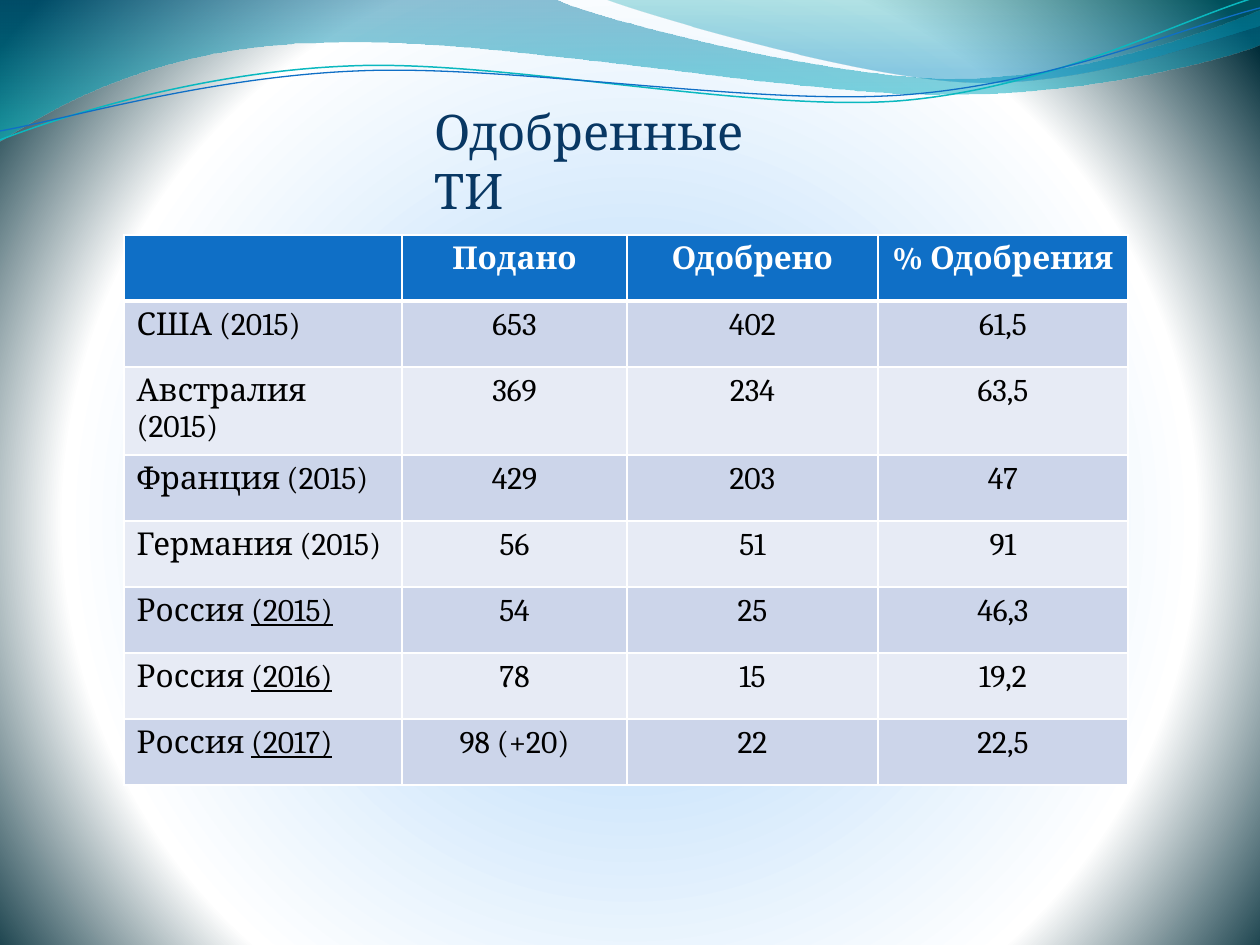
import math
from dataclasses import dataclass
from pptx import Presentation
from pptx import util as u
from pptx.dml.color import RGBColor
from pptx.enum import text
from pptx.oxml import ns
from lxml import etree

SCALE = u.Inches(10) / 1260  # EMU in one px


@dataclass(frozen=True)
class Theme:
    font: str = "Cambria"
    head: int = 28
    cell: int = 18
    title: str = "083763"
    ink: str = "000000"
    white: str = "FFFFFF"
    blue: str = "0F6FC6"
    teal: str = "0AB8BF"
    bands: tuple = ("CCD5EA", "E7EBF5")
    # gradient stops: position %, colour, opacity %
    back: tuple = ((25, "C8E3FB", 100), (72, "FFFFFF", 100), (100, "002C38", 100))
    wave: tuple = ((0, "0074A1", 45), (100, "00C6CF", 55))
    crest: tuple = ((0, "00A1A9", 30), (80, "008BBF", 45))


T = Theme()

# Outlines in px: a pair is a corner, three pairs are a Bezier curve
WAVE = [(0, 0), (554, -1),
        (600, 21, 837, 79, 955, 79), (1074, 79, 1207, 33, 1260, 11), (1261, 45),
        (1239, 55, 1096, 96, 940, 95), (784, 95, 481, 35, 324, 43),
        (163, 45, 58, 105, -1, 142)]
CREST = [(604, -1), (641, 14, 859, 78, 969, 82),
         (1079, 87, 1211, 40, 1260, 26), (1260, 0)]
AREAS = [((-1, -1, 1262, 144), WAVE, T.wave),
         ((604, -1, 656, 88), CREST, T.crest)]
LINES = [
    ((-3, 28, 1262, 89), T.teal, 0.85,
     [(0, 140), (60, 117, 199, 72, 349, 66),
      (498, 59, 747, 112, 898, 101), (1050, 89, 1182, 19, 1257, -3)]),
    ((-3, 38, 1264, 73), T.blue, 0.75,
     [(0, 131), (59, 121, 207, 77, 357, 71),
      (508, 64, 752, 106, 903, 95), (1053, 84, 1187, 26, 1260, 8)]),
]
TILT = -2.7  # degrees, of both lines

# Text after "_" is underlined
ROWS = [
    ("", "Подано", "Одобрено", "% Одобрения"),
    ("США (2015)", "653", "402", "61,5"),
    ("Австралия (2015)", "369", "234", "63,5"),
    ("Франция (2015)", "429", "203", "47"),
    ("Германия (2015)", "56", "51", "91"),
    ("Россия _(2015)", "54", "25", "46,3"),
    ("Россия _(2016)", "78", "15", "19,2"),
    ("Россия _(2017)", "98 (+20)", "22", "22,5"),
]
COLS = (278, 225, 251, 250)
ROW = 66


def px(n):
    return u.Emu(round(n * SCALE))


def rgb(code):
    return RGBColor.from_string(code)


def add(node, tag, **attrs):
    return etree.SubElement(node, ns.qn(tag), {k: str(v) for k, v in attrs.items()})


def shade(fill, stops, ring=None):
    """Gradient with opacity: downward, or circular about a rectangle."""
    fill.gradient()
    grad = fill._xPr.find(ns.qn("a:gradFill"))
    for kid in list(grad):
        grad.remove(kid)
    group = add(grad, "a:gsLst")
    for pos, code, alpha in stops:
        clr = add(add(group, "a:gs", pos=pos * 1000), "a:srgbClr", val=code)
        add(clr, "a:alpha", val=alpha * 1000)
    if ring:
        way = add(grad, "a:path", path="circle")
        add(way, "a:fillToRect", **{k: v * 1000 for k, v in zip("ltrb", ring)})
    else:
        add(grad, "a:lin", ang=5400000, scaled=0)


def curve(slide, box, parts, close, tilt=0):
    """Freeform whose sides may be Bezier curves, tilted about its box."""
    left, top, width, height = box
    mid_x, mid_y = left + width / 2, top + height / 2
    sin, cos = math.sin(math.radians(-tilt)), math.cos(math.radians(-tilt))

    def local(x, y):
        dx, dy = x - mid_x, y - mid_y
        return (px(dx * cos - dy * sin + width / 2),
                px(dx * sin + dy * cos + height / 2))

    ends = [local(*part[-2:]) for part in parts]
    pen = slide.shapes.build_freeform(*ends[0])
    pen.add_line_segments(ends[1:], close=close)
    shape = pen.convert_to_shape()
    shape.left, shape.top, shape.width, shape.height = map(px, box)
    shape.rotation = tilt % 360
    shape.shadow.inherit = False

    # Bend the sides
    route = next(shape._element.iter(ns.qn("a:path")))
    route.set("w", str(px(width)))
    route.set("h", str(px(height)))
    for step, part in zip(list(route), parts):
        for kid in list(step):
            step.remove(kid)
        if len(part) == 6:
            bend = etree.Element(ns.qn("a:cubicBezTo"))
            route.replace(step, bend)
            step = bend
        for x, y in zip(part[::2], part[1::2]):
            x, y = local(x, y)
            add(step, "a:pt", x=int(x), y=int(y))
    return shape


def area(slide, box, parts, stops):
    shape = curve(slide, box, parts, True)
    shade(shape.fill, stops)
    shape.line.fill.background()


def stroke(slide, box, code, width, parts):
    shape = curve(slide, box, parts, False, TILT)
    shape.fill.background()
    shape.line.color.rgb = rgb(code)
    shape.line.width = u.Pt(width)


def style(run, size, code, bold=False):
    run.font.name = T.font
    run.font.size = u.Pt(size)
    run.font.bold = bold
    run.font.color.rgb = rgb(code)


def title(slide, words):
    box = slide.shapes.title
    box.left, box.top, box.width, box.height = px(422), px(95), px(407), px(72)
    frame = box.text_frame
    frame.text = words
    frame.word_wrap = True
    frame.auto_size = text.MSO_AUTO_SIZE.SHAPE_TO_FIT_TEXT
    frame.vertical_anchor = text.MSO_ANCHOR.TOP
    par = frame.paragraphs[0]
    par.alignment = text.PP_ALIGN.LEFT
    par.line_spacing = 1.0
    style(par.runs[0], T.head, T.title)
    slide.shapes._spTree.append(box._element)  # in front of the waves


def edge(cell, row):
    """White borders, thick between the header and the body."""
    props = cell._tc.get_or_add_tcPr()
    thick = {0: "B", 1: "T"}.get(row)
    for i, side in enumerate("LRTB"):
        line = add(props, "a:ln" + side, w=u.Pt(3 if side == thick else 1))
        add(add(line, "a:solidFill"), "a:srgbClr", val=T.white)
        props.insert(i, line)


def fill_cell(cell, words, row, col):
    top = row == 0
    cell.fill.solid()
    cell.fill.fore_color.rgb = rgb(T.blue if top else T.bands[(row - 1) % 2])
    edge(cell, row)
    par = cell.text_frame.paragraphs[0]
    par.alignment = text.PP_ALIGN.CENTER if col else text.PP_ALIGN.LEFT
    plain, _, under = words.partition("_")
    par.text = plain
    if under:
        run = par.add_run()
        run.text = under
        run.font.underline = True
    for run in par.runs:
        style(run, T.cell, T.white if top else T.ink, top)


def grid(slide):
    frame = slide.shapes.add_table(len(ROWS), len(COLS), px(124), px(235),
                                   px(sum(COLS)), px(ROW * len(ROWS)))
    table = frame.table
    for col, width in zip(table.columns, COLS):
        col.width = px(width)
    for r, row in enumerate(ROWS):
        table.rows[r].height = px(ROW)
        for c, words in enumerate(row):
            fill_cell(table.cell(r, c), words, r, c)


def main():
    deck = Presentation()
    deck.slide_width, deck.slide_height = px(1260), px(945)
    slide = deck.slides.add_slide(deck.slide_layouts[5])
    # Backdrop
    shade(slide.background.fill, T.back, ring=(10, 110, 10, 100))
    for item in AREAS:
        area(slide, *item)
    for item in LINES:
        stroke(slide, *item)
    # Content
    title(slide, "Одобренные ТИ")
    grid(slide)
    deck.save("out.pptx")


if __name__ == "__main__":
    main()
